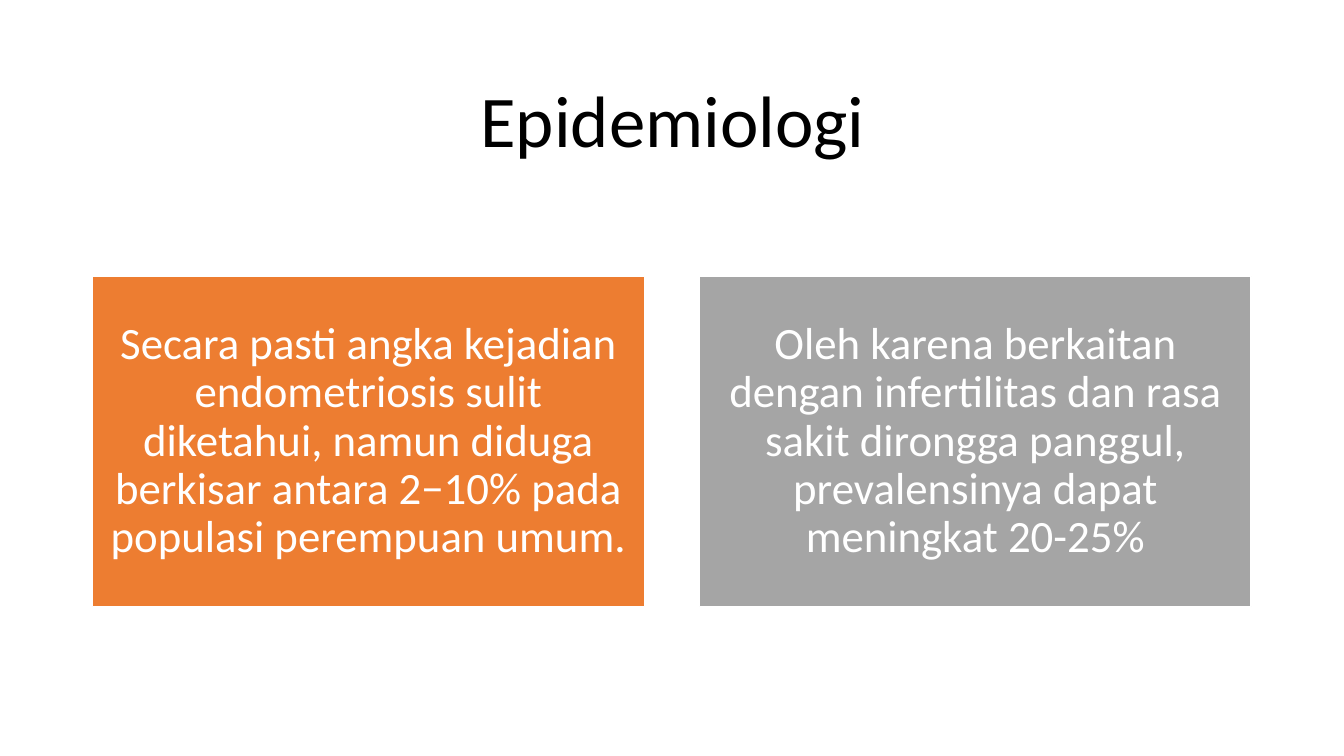
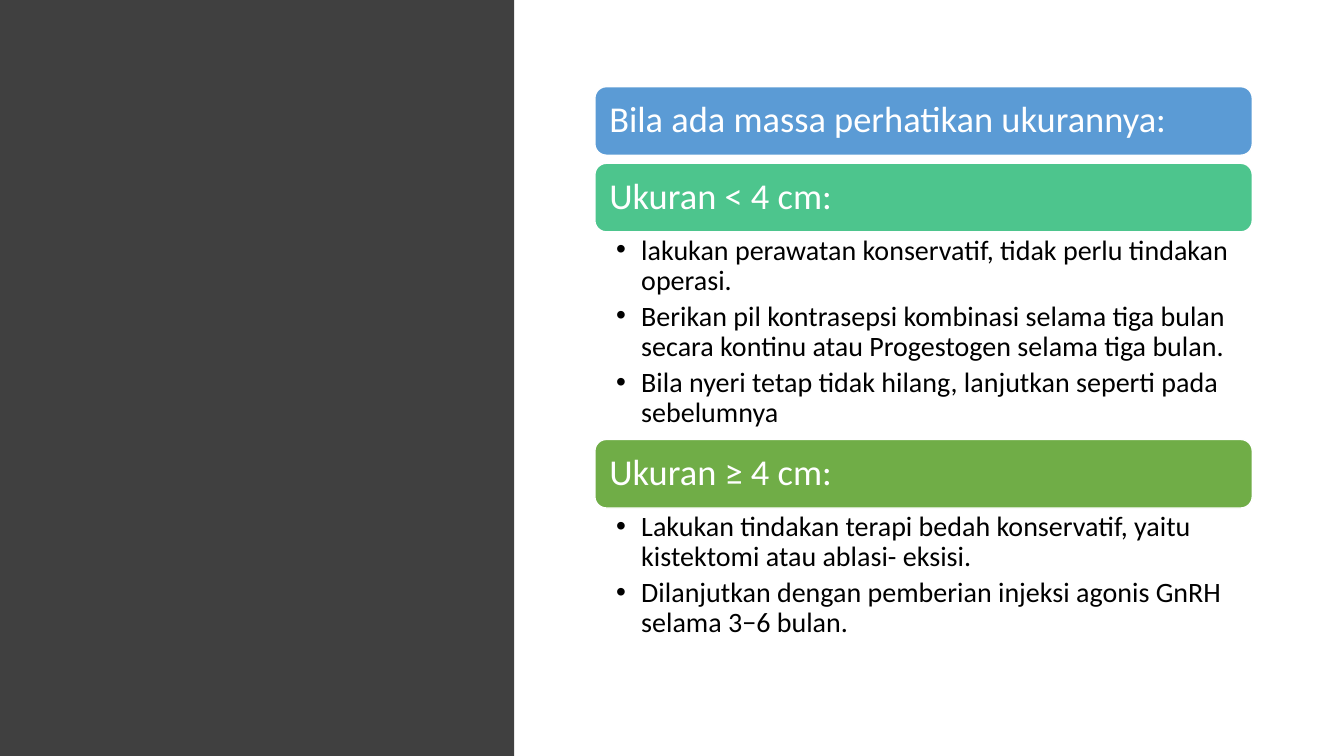
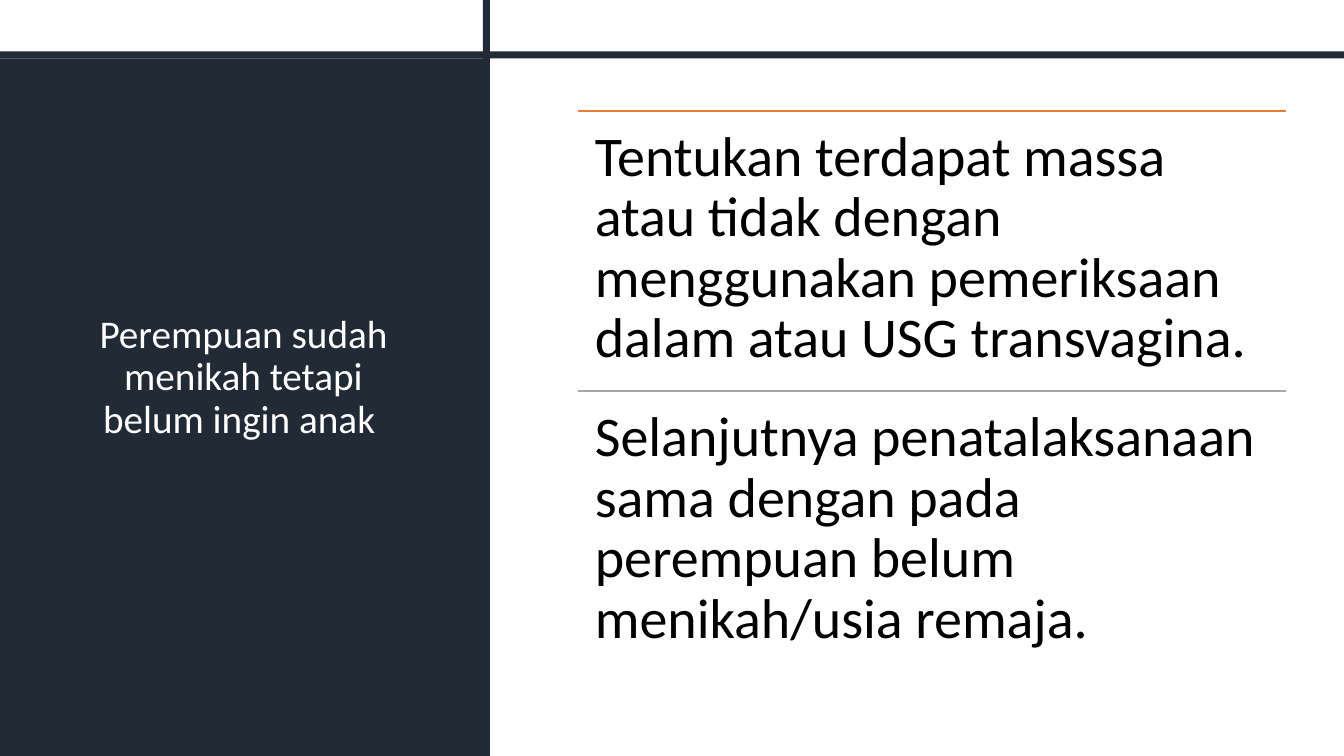
from lxml import etree
from pptx import Presentation
from pptx import util as u
from pptx.dml.color import RGBColor
from pptx.enum import shapes, text
from pptx.oxml import ns

PX = 9144
TITLE_ONLY, BLANK = 5, 6
FONT = "Calibri"
BLACK, WHITE = "000000", "FFFFFF"
ORANGE, GRAY, BLUE = "ED7D31", "A5A5A5", "5B9BD5"
TEAL, GREEN = "4DC58D", "70AD47"
CHARCOAL, NAVY = "404040", "222A35"
CENTER, LEFT = text.PP_ALIGN.CENTER, text.PP_ALIGN.LEFT
TOP, MIDDLE = text.MSO_ANCHOR.TOP, text.MSO_ANCHOR.MIDDLE
RECT, ROUNDED = shapes.MSO_SHAPE.RECTANGLE, shapes.MSO_SHAPE.ROUNDED_RECTANGLE


def px(value):
    return u.Emu(value * PX)


def color(value):
    return RGBColor.from_string(value)


class Slides:
    def __init__(self, width, height):
        self.deck = Presentation()
        self.deck.slide_width = px(width)
        self.deck.slide_height = px(height)
        self.page = None

    def new_page(self, layout):
        self.page = self.deck.slides.add_slide(self.deck.slide_layouts[layout])

    def fill_text(self, box, lines, size, ink, align=LEFT, anchor=TOP,
                  insets=(10, 5, 10, 5), bullets=False):
        frame = box.text_frame
        frame.word_wrap = True
        frame.auto_size = text.MSO_AUTO_SIZE.NONE
        frame.vertical_anchor = anchor
        (frame.margin_left, frame.margin_top,
         frame.margin_right, frame.margin_bottom) = map(px, insets)
        for index, line in enumerate(lines):
            para = frame.add_paragraph() if index else frame.paragraphs[0]
            para.alignment = align
            para.line_spacing = 0.9
            if bullets:
                self.bullet(para, size)
            span = para.add_run()
            span.text = line
            span.font.name = FONT
            span.font.size = u.Pt(size)
            span.font.color.rgb = color(ink)

    def bullet(self, para, size):
        para.space_after = u.Pt(size * 0.2)
        props = para._p.get_or_add_pPr()
        props.set("marL", str(px(25)))
        props.set("indent", str(px(-25)))
        etree.SubElement(props, ns.qn("a:buFont")).set("typeface", "Arial")
        etree.SubElement(props, ns.qn("a:buChar")).set("char", "•")

    def title(self, at, line, size, ink):
        box = self.page.shapes.title
        box.left, box.top, box.width, box.height = map(px, at)
        box.element.getparent().append(box.element)
        self.fill_text(box, [line], size, ink, CENTER, MIDDLE)

    def block(self, at, fill, kind=RECT, outline=None):
        box = self.page.shapes.add_shape(kind, *map(px, at))
        box.shadow.inherit = False
        box.fill.solid()
        box.fill.fore_color.rgb = color(fill)
        if outline:
            box.line.color.rgb = color(outline)
            box.line.width = u.Pt(1)
        else:
            box.line.fill.background()
        return box

    def card(self, at, fill, line, size, inset, kind=RECT, align=LEFT):
        box = self.block(at, fill, kind, WHITE)
        self.fill_text(box, [line], size, WHITE, align, MIDDLE, (inset,) * 4)

    def label(self, at, lines, size, insets, bullets=False):
        box = self.page.shapes.add_textbox(*map(px, at))
        self.fill_text(box, lines, size, BLACK, insets=insets, bullets=bullets)

    def rule(self, left, top, width, ink):
        line = self.page.shapes.add_connector(
            shapes.MSO_CONNECTOR.STRAIGHT,
            px(left), px(top), px(left + width), px(top))
        line.line.color.rgb = color(ink)
        line.line.width = u.Pt(1)
        etree.SubElement(line.element.spPr, ns.qn("a:effectLst"))


def epidemiology(slides):
    slides.new_page(TITLE_ONLY)
    slides.title((92, 61, 1150, 124), "Epidemiologi", 52, BLACK)
    cards = [
        (ORANGE, "Secara pasti angka kejadian endometriosis sulit diketahui, "
                 "namun diduga berkisar antara 2−10% pada populasi perempuan umum."),
        (GRAY, "Oleh karena berkaitan dengan infertilitas dan rasa sakit "
               "dirongga panggul, prevalensinya dapat meningkat 20-25%"),
    ]
    for index, (fill, line) in enumerate(cards):
        slides.card((92 + 602 * index, 274, 547, 328), fill, line, 32, 13,
                    align=CENTER)


def mass_size(slides):
    slides.new_page(BLANK)
    slides.block((0, 0, 510, 750), CHARCOAL)
    sections = [
        (BLUE, "Bila ada massa perhatikan ukurannya:", [], 8),
        (TEAL, "Ukuran < 4 cm:", [
            "lakukan perawatan konservatif, tidak perlu tindakan operasi.",
            "Berikan pil kontrasepsi kombinasi selama tiga bulan secara "
            "kontinu atau Progestogen selama tiga bulan.",
            "Bila nyeri tetap tidak hilang, lanjutkan seperti pada sebelumnya",
        ], 206),
        (GREEN, "Ukuran ≥ 4 cm:", [
            "Lakukan tindakan terapi bedah konservatif, yaitu kistektomi "
            "atau ablasi- eksisi.",
            "Dilanjutkan dengan pemberian injeksi agonis GnRH selama 3−6 bulan.",
        ], 138),
    ]
    left, top, width, bar = 590, 86, 652, 68
    for fill, heading, items, below in sections:
        slides.card((left, top, width, bar), fill, heading, 26, 11, ROUNDED)
        top += bar
        if items:
            slides.label((left, top, width, below), items, 20,
                         (21, 4, 20, 4), bullets=True)
        top += below


def married_women(slides):
    slides.new_page(TITLE_ONLY)
    for at in [(0, 58, 486, 692), (479, 0, 7, 750), (0, 51, 1333, 7)]:
        slides.block(at, NAVY)
    slides.title((66, 84, 351, 582),
                 "Perempuan sudah menikah tetapi belum ingin anak ", 28, WHITE)
    steps = [
        (ORANGE, "Tentukan terdapat massa atau tidak dengan menggunakan "
                 "pemeriksaan dalam atau USG transvagina."),
        (GRAY, "Selanjutnya penatalaksanaan sama dengan pada perempuan belum "
               "menikah/usia remaja."),
    ]
    left, width, height = 573, 702, 278
    for index, (ink, line) in enumerate(steps):
        top = 110 + height * index
        slides.rule(left, top, width, ink)
        slides.label((left, top, width, height), [line], 40, (17,) * 4)


def main():
    slides = Slides(1333, 750)
    epidemiology(slides)
    mass_size(slides)
    married_women(slides)
    slides.deck.save("out.pptx")


if __name__ == "__main__":
    main()
